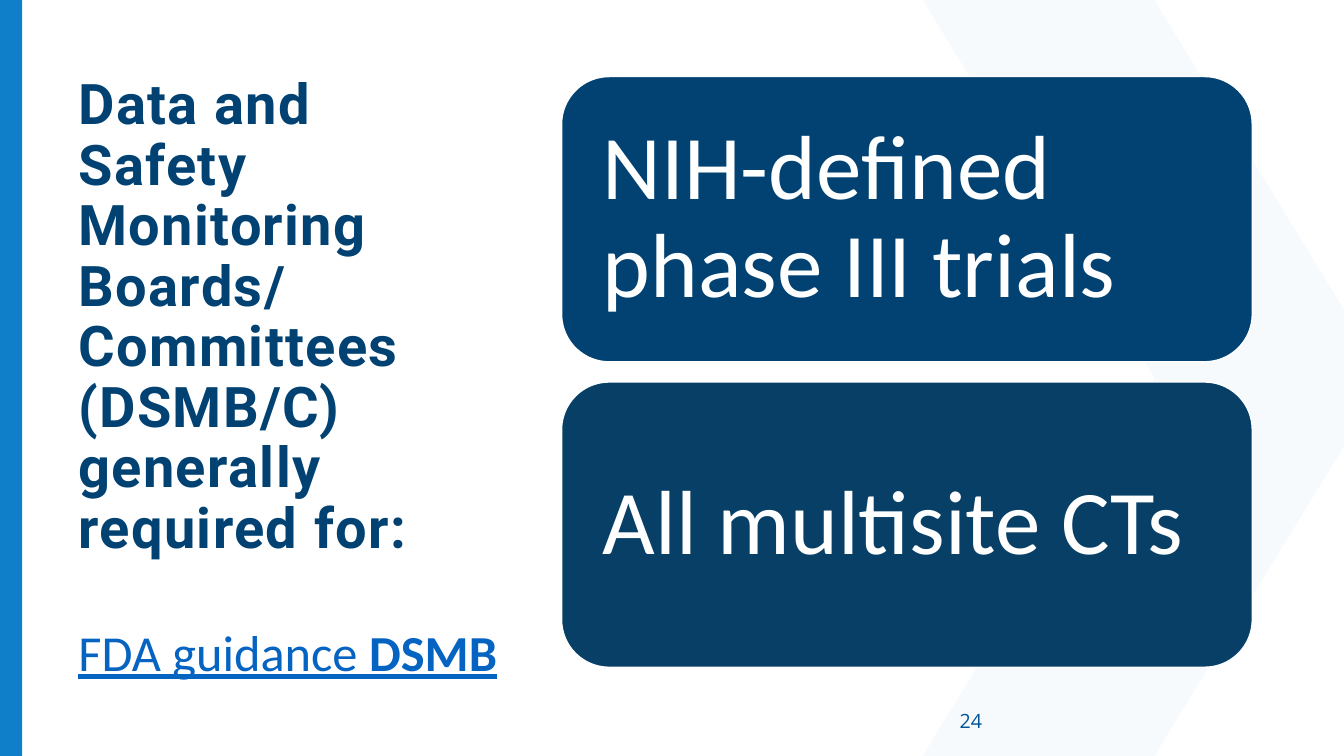
from dataclasses import dataclass

from lxml import etree
from pptx import Presentation
from pptx import util as u
from pptx.dml.color import RGBColor
from pptx.enum import shapes, text
from pptx.oxml import ns

W, H = 13.33, 7.5


@dataclass(frozen=True)
class Theme:
    accent: str = "0F7FC9"
    navy: str = "014273"
    deep: str = "073F66"
    link: str = "0563C1"
    number: str = "015396"
    white: str = "FFFFFF"
    title: dict = None
    card: dict = None
    guidance: dict = None
    page: dict = None


def font(name, size, **more):
    return dict(name=name, size=u.Pt(size), **more)


THEME = Theme(
    title=font("Roboto", 40, bold=True),
    card=font("Calibri", 65),
    guidance=font("Calibri", 36, underline=True),
    page=font("Open Sans", 14),
)


def inches(*values):
    return [u.Inches(v) for v in values]


def paint(sp, color):
    sp.shadow.inherit = False
    sp.fill.solid()
    sp.fill.fore_color.rgb = RGBColor.from_string(color)
    sp.line.fill.background()


def write(sp, runs, style, color, inset=(0.1, 0.05), spacing=None,
          anchor=text.MSO_ANCHOR.MIDDLE):
    """Fill a shape with one left-aligned paragraph of (text, extra format) runs."""
    tf = sp.text_frame
    tf.word_wrap = True
    tf.vertical_anchor = anchor
    tf.margin_left = tf.margin_right = u.Inches(inset[0])
    tf.margin_top = tf.margin_bottom = u.Inches(inset[1])
    p = tf.paragraphs[0]
    p.alignment = text.PP_ALIGN.LEFT
    p.line_spacing = spacing
    for i, (words, extra) in enumerate(runs):
        if i and extra.get("new_line"):
            p.add_line_break()
        r = p.add_run()
        r.text = words
        for key, value in {**style, **extra}.items():
            if key == "tracking":
                r.font._element.set("spc", str(value))
            elif key != "new_line":
                setattr(r.font, key, value)
        r.font.color.rgb = RGBColor.from_string(color)


def add_backdrop(slide, box):
    left, top, width, height = box
    # Pale chevron, clipped by the right edge
    x, tip, edge = left + 9.15, left + 11.45, left + width
    points = [(tip, top), (edge, top + 3.07), (edge, top + height - 3.07),
              (tip, top + height), (x, top + height), (tip, top + height / 2)]
    builder = slide.shapes.build_freeform(*inches(x, top), scale=1.0)
    builder.add_line_segments([inches(*pt) for pt in points], close=True)
    chevron = builder.convert_to_shape()
    paint(chevron, THEME.accent)
    color = chevron.fill._xPr.find(".//" + ns.qn("a:srgbClr"))
    etree.SubElement(color, ns.qn("a:alpha")).set("val", "3000")
    # Accent bar on the left edge
    bar = slide.shapes.add_shape(shapes.MSO_SHAPE.RECTANGLE,
                                 *inches(left, top, 0.22, height))
    paint(bar, THEME.accent)


def add_heading(slide, box):
    left, top, width, height = box
    title = slide.shapes.add_textbox(*inches(left, top, width, 5.56))
    write(title, [("Data and Safety Monitoring Boards/", dict(tracking=100)),
                  ("Committees (DSMB/C) generally required for:",
                   dict(tracking=100, new_line=True))],
          THEME.title, THEME.navy, spacing=0.9)
    # Guidance line below the title
    guidance = slide.shapes.add_textbox(
        *inches(left, top + 5.73, 5.1, height - 5.73))
    write(guidance, [("FDA guidance ", {}), ("DSMB", dict(bold=True))],
          THEME.guidance, THEME.link, anchor=text.MSO_ANCHOR.TOP)


def add_cards(slide, box, cards, gap=0.2):
    left, top, width, height = box
    card_h = (height - gap * (len(cards) - 1)) / len(cards)
    for i, (words, color) in enumerate(cards):
        card = slide.shapes.add_shape(
            shapes.MSO_SHAPE.ROUNDED_RECTANGLE,
            *inches(left, top + i * (card_h + gap), width, card_h))
        paint(card, color)
        card.line.color.rgb = RGBColor.from_string(THEME.white)
        card.line.width = u.Pt(1)
        write(card, [(words, {})], THEME.card, THEME.white,
              inset=(0.27, 0.27), spacing=0.9)


def add_page_number(slide, box, number):
    sp = slide.shapes.add_textbox(*inches(*box))
    write(sp, [(number, {})], THEME.page, THEME.number)


def main():
    prs = Presentation()
    prs.slide_width, prs.slide_height = inches(W, H)
    slide = prs.slides.add_slide(prs.slide_layouts[6])
    add_backdrop(slide, (0, 0, W, H))
    add_heading(slide, (0.68, 0.38, 4.16, 6.74))
    add_cards(slide, (5.57, 0.76, 6.85, 5.86),
              [("NIH-defined phase III trials", THEME.navy),
               ("All multisite CTs", THEME.deep)])
    add_page_number(slide, (9.42, 6.95, 3, 0.4), "24")
    prs.save("out.pptx")


if __name__ == "__main__":
    main()
